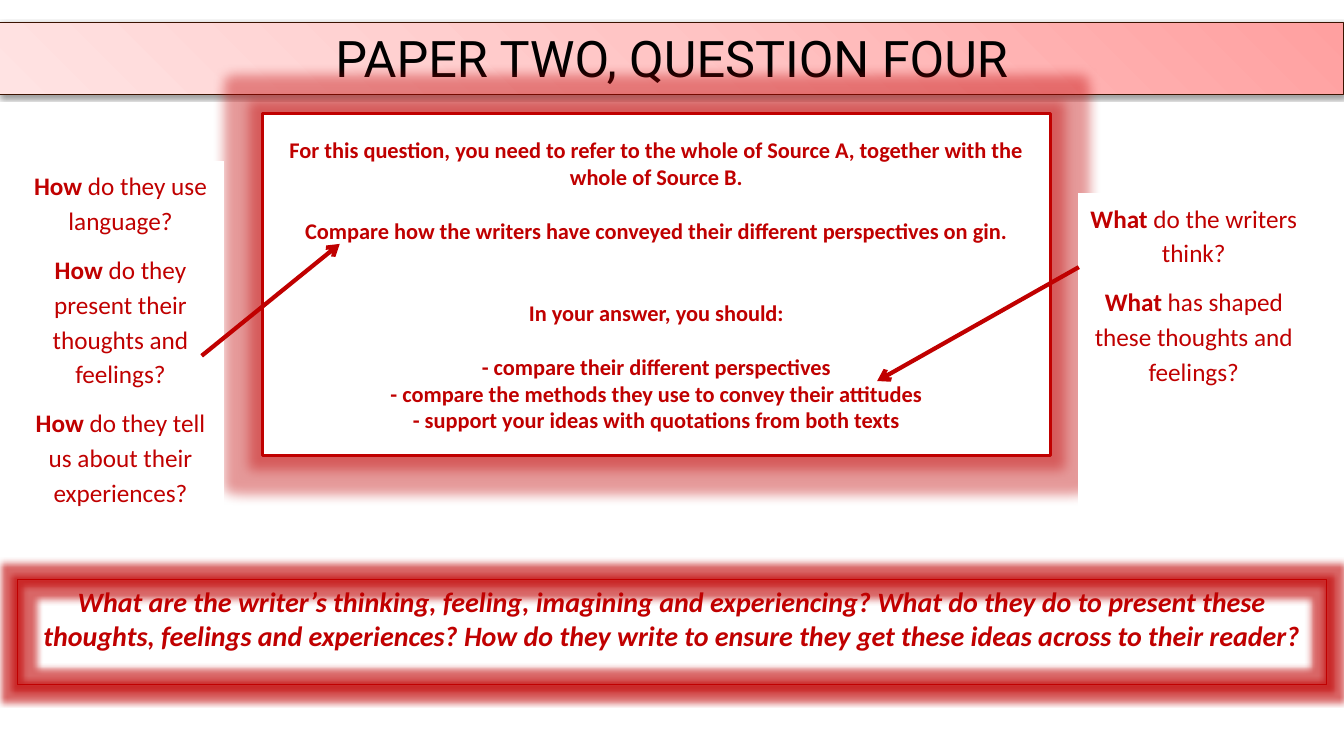
from dataclasses import dataclass
from typing import Optional

from lxml.etree import SubElement
from pptx import Presentation
from pptx.dml.color import RGBColor
from pptx.enum.shapes import MSO_CONNECTOR, MSO_SHAPE
from pptx.enum.text import MSO_ANCHOR, PP_ALIGN
from pptx.oxml import parse_xml
from pptx.oxml.ns import nsdecls, qn
from pptx.shapes.autoshape import Shape
from pptx.slide import Slide
from pptx.util import Inches, Pt

RED = RGBColor(0xC0, 0x00, 0x00)
BROWN = RGBColor(0x3C, 0x13, 0x01)
BLACK = RGBColor(0x00, 0x00, 0x00)
WHITE = RGBColor(0xFF, 0xFF, 0xFF)
PINKS = [
    (0, RGBColor(0xFF, 0xA0, 0xA0)),
    (50, RGBColor(0xFF, 0xC5, 0xC5)),
    (100, RGBColor(0xFF, 0xE3, 0xE3)),
]


@dataclass
class Para:
    text: str
    lead: str = ""
    after: float = 0


@dataclass
class Panel:
    left: float
    top: float
    width: float
    height: float
    paras: list[Para]
    size: float
    edge: RGBColor
    weight: float
    fill: Optional[RGBColor] = None
    ink: RGBColor = RED
    font: str = "Calibri"
    bold: bool = False
    slant: bool = False
    space: float = 1
    anchor: MSO_ANCHOR = MSO_ANCHOR.TOP


@dataclass
class Arrow:
    x1: float
    y1: float
    x2: float
    y2: float


TITLE = Panel(0, 0.22, 13.33, 0.72, [Para("PAPER TWO, QUESTION FOUR")], 36,
              BROWN, 0.75, ink=BLACK, font="Roboto")
PROMPT = Panel(0.17, 5.75, 12.99, 1.04, [
    Para("What are the writer’s thinking, feeling, imagining and experiencing? "
         "What do they do to present these thoughts, feelings and experiences? "
         "How do they write to ensure they get these ideas across to their reader?"),
], 20, RED, 0.75, bold=True, slant=True)
TASK = Panel(2.6, 1.13, 7.82, 3.39, [
    Para("For this question, you need to refer to the whole of Source A, "
         "together with the whole of Source B.", after=19.5),
    Para("Compare how the writers have conveyed their different "
         "perspectives on gin.", after=39),
    Para("In your answer, you should:", after=19.5),
    Para("- compare their different perspectives"),
    Para("- compare the methods they use to convey their attitudes"),
    Para("- support your ideas with quotations from both texts"),
], 16, RED, 2.25, fill=WHITE, bold=True, anchor=MSO_ANCHOR.MIDDLE)
SIDES = [
    Panel(0.17, 1.6, 2.05, 3.48, [
        Para(" do they use language?", "How", 10),
        Para(" do they present their thoughts and feelings?", "How", 10),
        Para(" do they tell us about their experiences?", "How", 10),
    ], 18, WHITE, 0.5, fill=WHITE, space=1.15),
    Panel(10.7, 1.92, 2.28, 3.22, [
        Para(" do the writers think?", "What", 10),
        Para(" has shaped these thoughts and feelings?", "What", 10),
    ], 18, WHITE, 0.5, fill=WHITE, space=1.15),
]
ARROWS = [Arrow(2, 3.53, 3.37, 2.42), Arrow(10.7, 2.65, 8.7, 3.78)]


def add_panel(slide: Slide, panel: Panel) -> Shape:
    box = slide.shapes.add_shape(
        MSO_SHAPE.RECTANGLE, Inches(panel.left), Inches(panel.top),
        Inches(panel.width), Inches(panel.height))
    box.shadow.inherit = False
    if panel.fill is None:
        box.fill.background()
    else:
        box.fill.solid()
        box.fill.fore_color.rgb = panel.fill
    box.line.color.rgb = panel.edge
    box.line.width = Pt(panel.weight)
    frame = box.text_frame
    frame.word_wrap = True
    frame.vertical_anchor = panel.anchor
    for i, item in enumerate(panel.paras):
        para = frame.add_paragraph() if i else frame.paragraphs[0]
        para.alignment = PP_ALIGN.CENTER
        para.line_spacing = panel.space
        para.space_after = Pt(item.after)
        for text, bold in ((item.lead, True), (item.text, panel.bold)):
            if text:
                run = para.add_run()
                run.text = text
                run.font.name = panel.font
                run.font.size = Pt(panel.size)
                run.font.bold = bold
                run.font.italic = panel.slant
                run.font.color.rgb = panel.ink
    return box


def add_effect(box: Shape, name: str, tint: RGBColor, alpha: int,
               **sizes: int) -> None:
    effects = box._element.spPr.find(qn("a:effectLst"))
    effect = SubElement(effects, qn(f"a:{name}"),
                        {key: str(val) for key, val in sizes.items()})
    color = SubElement(effect, qn("a:srgbClr"), val=str(tint))
    SubElement(color, qn("a:alpha"), val=str(alpha * 1000))


def shade(box: Shape) -> None:
    box.fill.gradient()
    box.fill.gradient_angle = 225
    stops = box._element.spPr.find(qn("a:gradFill")).find(qn("a:gsLst"))
    for stop in list(stops):
        stops.remove(stop)
    for pos, tint in PINKS:
        stop = SubElement(stops, qn("a:gs"), pos=str(pos * 1000))
        SubElement(stop, qn("a:srgbClr"), val=str(tint))


def add_arrow(slide: Slide, arrow: Arrow) -> None:
    link = slide.shapes.add_connector(
        MSO_CONNECTOR.STRAIGHT, Inches(arrow.x1), Inches(arrow.y1),
        Inches(arrow.x2), Inches(arrow.y2))
    link.line.color.rgb = RED
    link.line.width = Pt(3)
    SubElement(link.line._get_or_add_ln(), qn("a:tailEnd"), type="arrow")
    link._element.spPr.append(parse_xml(f"<a:effectLst {nsdecls('a')}/>"))


def main() -> None:
    deck = Presentation()
    deck.slide_width = Inches(13.33)
    deck.slide_height = Inches(7.5)
    slide = deck.slides.add_slide(deck.slide_layouts[6])
    title = add_panel(slide, TITLE)
    shade(title)
    add_effect(title, "outerShdw", BLACK, 38, blurRad=Pt(3.1), dist=Pt(1.6),
               dir=90 * 60000)
    prompt = add_panel(slide, PROMPT)
    add_effect(prompt, "glow", RED, 60, rad=Pt(8))
    task = add_panel(slide, TASK)
    add_effect(task, "glow", RED, 40, rad=Pt(18))
    for side in SIDES:
        add_panel(slide, side)
    for arrow in ARROWS:
        add_arrow(slide, arrow)
    deck.save("out.pptx")


if __name__ == "__main__":
    main()
